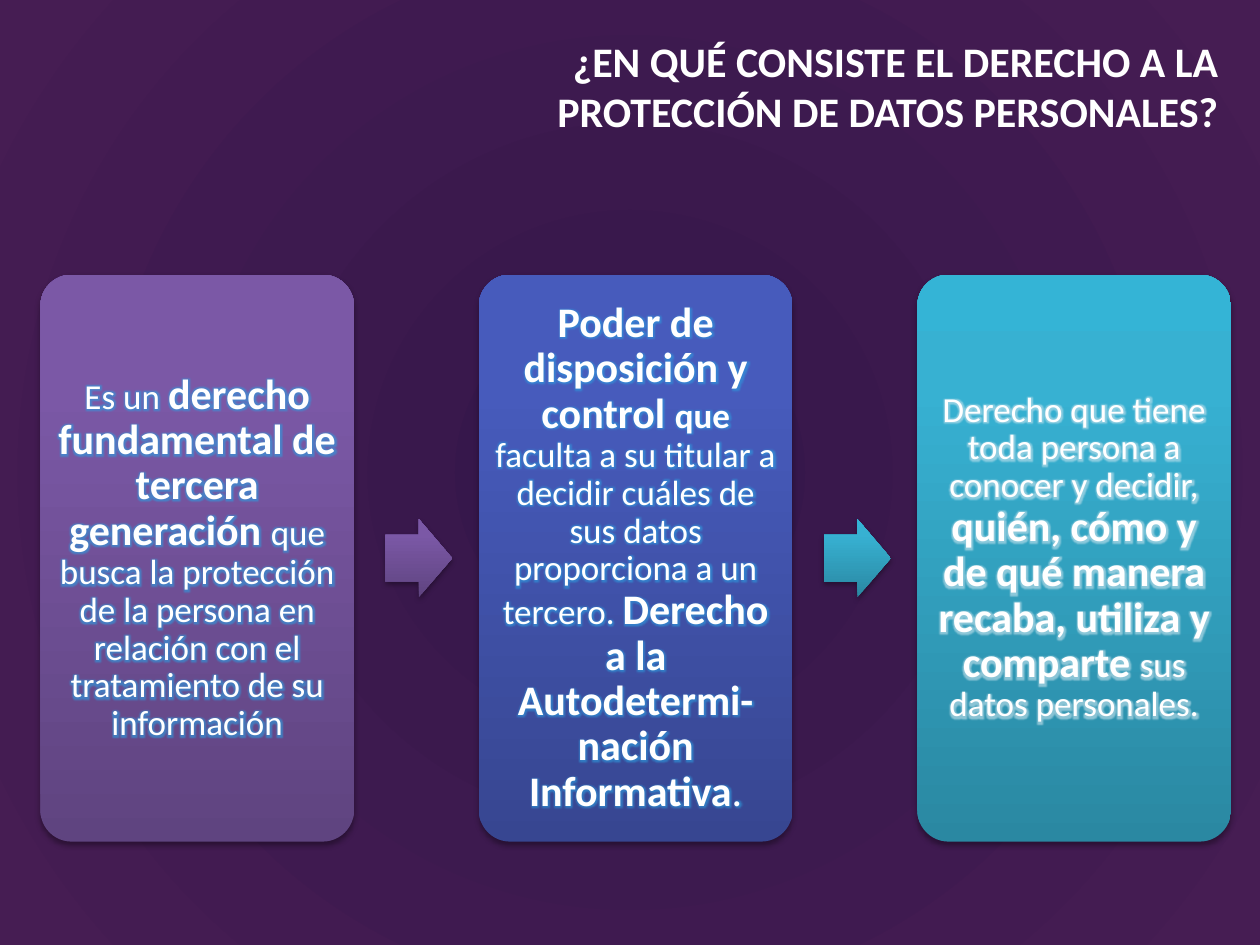
from dataclasses import dataclass

from lxml.etree import SubElement
from pptx import Presentation
from pptx.dml.color import RGBColor
from pptx.enum.shapes import MSO_SHAPE as SHAPE
from pptx.enum.text import MSO_ANCHOR as ANCHOR, MSO_AUTO_SIZE as AUTO, PP_ALIGN as ALIGN
from pptx.oxml.ns import qn
from pptx.util import Emu, Inches, Pt

FONT = "Calibri"
WHITE = RGBColor(0xFF, 0xFF, 0xFF)
BLACK = RGBColor(0x00, 0x00, 0x00)
GLOW_BLUE = RGBColor(0x2C, 0x9C, 0xE0)
GLOW_PALE = RGBColor(0xC8, 0xE4, 0xEE)
BACKDROP = [(0, RGBColor(0x34, 0x16, 0x4A)), (100, RGBColor(0x46, 0x1D, 0x53))]
PURPLE = [(0, RGBColor(0x5F, 0x44, 0x80)), (80, RGBColor(0x7B, 0x58, 0xA6)),
          (100, RGBColor(0x7C, 0x57, 0xA8))]
BLUE = [(0, RGBColor(0x37, 0x46, 0x91)), (80, RGBColor(0x47, 0x5B, 0xBC)),
        (100, RGBColor(0x45, 0x5A, 0xBF))]
TEAL = [(0, RGBColor(0x2A, 0x88, 0xA2)), (80, RGBColor(0x37, 0xB1, 0xD2)),
        (100, RGBColor(0x34, 0xB4, 0xD6))]

# Grid: three columns of cards, an arrow in each gap
LEFT, PITCH, CARD_W = Inches(0.32), Inches(3.48), Inches(2.49)
TOP, CARD_H = Inches(2.18), Inches(4.5)
ARROW_W, ARROW_H, ARROW_DX = Inches(0.53), Inches(0.62), Inches(2.74)
BIG, SMALL = 24, 20


@dataclass
class Run:
    text: str
    size: int = SMALL
    bold: bool = False


@dataclass
class Card:
    stops: list
    glow: RGBColor
    inset: float
    runs: list[Run]


CARDS = [
    Card(PURPLE, GLOW_BLUE, 0.08, [
        Run("Es un "),
        Run("derecho fundamental de tercera generación ", BIG, True),
        Run("que busca la protección de la persona en relación con el "
            "tratamiento de su información")]),
    Card(BLUE, GLOW_BLUE, 0.1, [
        Run("Poder de disposición y control ", BIG, True),
        Run("que ", SMALL, True),
        Run("faculta a su titular a decidir cuáles de sus datos proporciona "
            "a un tercero. "),
        Run("Derecho a la Autodetermi-nación Informativa", BIG, True),
        Run(".", BIG)]),
    Card(TEAL, GLOW_PALE, 0.08, [
        Run("Derecho que tiene toda persona a conocer y decidir, "),
        Run("quién, cómo y de qué manera recaba, utiliza y comparte ", BIG, True),
        Run("sus datos personales.")]),
]
ARROW_STOPS = [PURPLE, TEAL]


def add_color(parent, color: RGBColor, alpha: int = 100) -> None:
    clr = SubElement(parent, qn("a:srgbClr"), val=str(color))
    if alpha < 100:
        SubElement(clr, qn("a:alpha"), val=str(alpha * 1000))


def set_gradient(fill, owner, stops: list, radial: bool = False) -> None:
    fill.gradient()
    grad = owner.find(".//" + qn("a:gradFill"))
    for child in list(grad):
        grad.remove(child)
    gs_list = SubElement(grad, qn("a:gsLst"))
    for pos, color in stops:
        add_color(SubElement(gs_list, qn("a:gs"), pos=str(pos * 1000)), color)
    if radial:
        path = SubElement(grad, qn("a:path"), path="circle")
        SubElement(path, qn("a:fillToRect"), l="50000", t="50000", r="50000", b="50000")
    else:
        SubElement(grad, qn("a:lin"), ang="16200000", scaled="0")


def add_text(p, text: str, *, size: int, bold: bool = False, glow: RGBColor | None = None) -> None:
    r = p.add_run()
    r.text = text
    r.font.name, r.font.size, r.font.bold = FONT, Pt(size), bold
    r.font.color.rgb = WHITE
    if glow is not None:
        rPr = r._r.get_or_add_rPr()
        effects = SubElement(rPr, qn("a:effectLst"))
        rPr.find(qn("a:solidFill")).addnext(effects)
        add_color(SubElement(effects, qn("a:glow"), rad=str(Pt(5))), glow, 60)


def add_block(sld, kind, x, y, w, h, stops: list, adjustments: list[float]) -> None:
    s = sld.shapes.add_shape(kind, Emu(x), Emu(y), w, h)
    for i, value in enumerate(adjustments):
        s.adjustments[i] = value
    set_gradient(s.fill, s._element.spPr, stops)
    s.line.fill.background()
    s.shadow.inherit = False
    effects = s._element.spPr.find(qn("a:effectLst"))
    shadow = SubElement(effects, qn("a:outerShdw"), blurRad=str(Pt(3.1)),
                        dist=str(Pt(1.8)), dir="5400000", rotWithShape="0")
    add_color(shadow, BLACK, 35)


def add_card(sld, col: int, card: Card) -> None:
    x = Emu(LEFT + col * PITCH)
    add_block(sld, SHAPE.ROUNDED_RECTANGLE, x, TOP, CARD_W, CARD_H, card.stops, [0.1])
    tf = sld.shapes.add_textbox(x, TOP, CARD_W, CARD_H).text_frame
    tf.word_wrap = True
    tf.vertical_anchor = ANCHOR.MIDDLE
    tf.margin_left = tf.margin_right = tf.margin_top = tf.margin_bottom = Inches(card.inset)
    p = tf.paragraphs[0]
    p.alignment, p.line_spacing = ALIGN.CENTER, 0.9
    for run in card.runs:
        add_text(p, run.text, size=run.size, bold=run.bold, glow=card.glow)


def add_title(sld) -> None:
    sp = sld.shapes.title
    sp.left, sp.top, sp.width, sp.height = map(Inches, (2.66, 0.23, 7.11, 0.91))
    tf = sp.text_frame
    tf.word_wrap, tf.auto_size = True, AUTO.SHAPE_TO_FIT_TEXT
    tf.vertical_anchor = ANCHOR.TOP
    p = tf.paragraphs[0]
    p.alignment = ALIGN.RIGHT
    add_text(p, "¿EN QUÉ CONSISTE EL DERECHO A LA PROTECCIÓN DE DATOS PERSONALES?",
             size=BIG, bold=True)


def main() -> None:
    prs = Presentation()
    prs.slide_width, prs.slide_height = Inches(10), Inches(7.5)
    sld = prs.slides.add_slide(prs.slide_layouts[5])

    # Background and title
    set_gradient(sld.background.fill, sld._element, BACKDROP, radial=True)
    add_title(sld)

    # Cards, then the arrows between them
    for col, card in enumerate(CARDS):
        add_card(sld, col, card)
    for col, stops in enumerate(ARROW_STOPS):
        add_block(sld, SHAPE.RIGHT_ARROW, LEFT + col * PITCH + ARROW_DX,
                  TOP + (CARD_H - ARROW_H) // 2, ARROW_W, ARROW_H, stops, [0.6, 0.5])

    prs.save("out.pptx")


if __name__ == "__main__":
    main()
